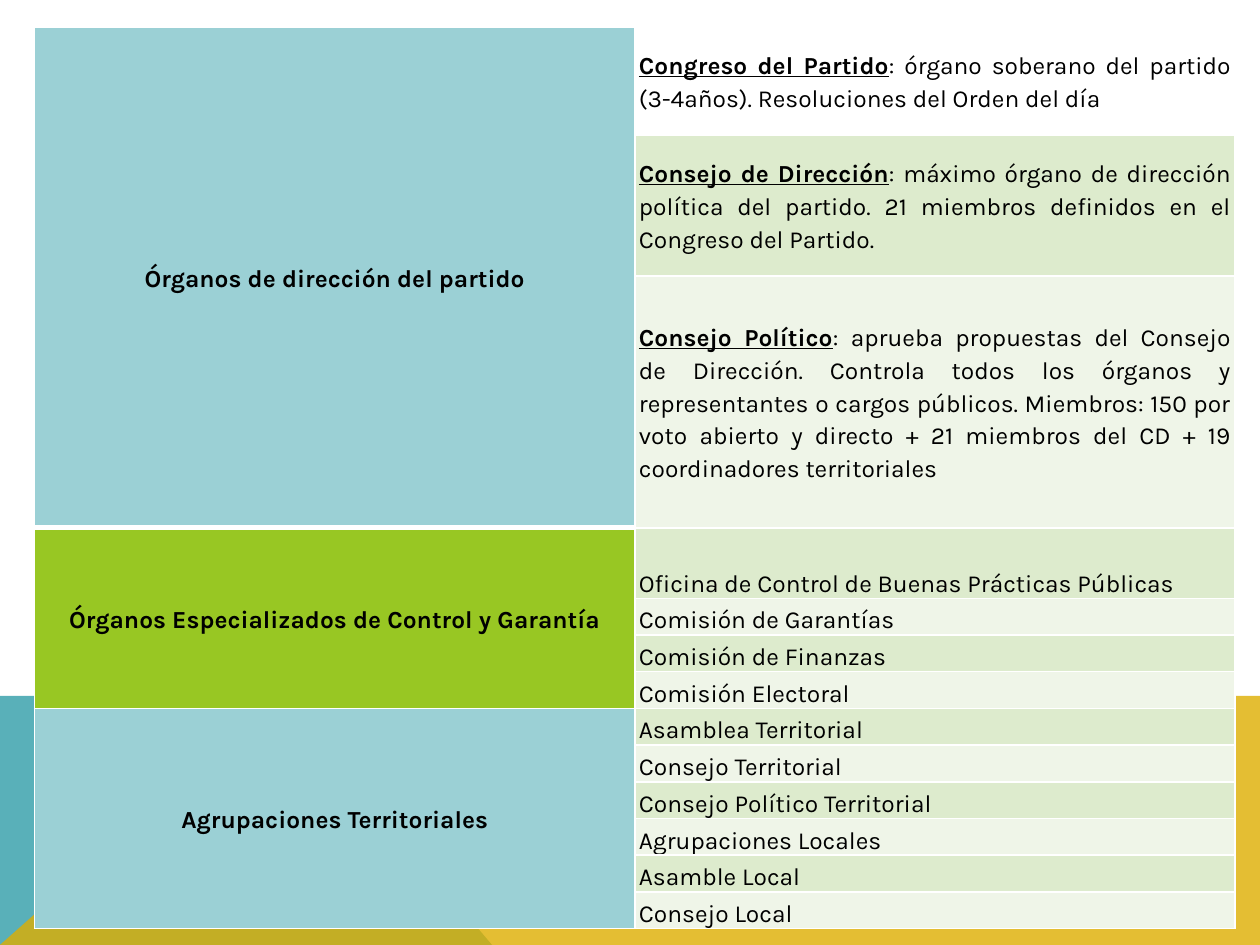
import pptx
import pptx.dml.color
import pptx.enum.text
import pptx.oxml
import pptx.oxml.ns
import pptx.util
from lxml import etree

Cm, Pt = pptx.util.Cm, pptx.util.Pt
ALIGN = pptx.enum.text.PP_ALIGN
ANCHOR = pptx.enum.text.MSO_ANCHOR

HUES = {
    "teal": "59B0B9",
    "gold": "DEAE00",
    "aqua": "9BD0D5",
    "lime": "98C723",
    "mint": "DDEBCD",
    "pale": "EFF5E8",
    "white": "FFFFFF",
    "black": "000000",
}
INSETS = {"margin_left": Cm(0.08), "margin_right": Cm(0.08),
          "margin_top": 0, "margin_bottom": 0}
FONT = {"name": "Karla", "size": Pt(14)}

# Each group: heading, fill, rows of (underlined lead, text, height in cm)
LOW = 0.74
GROUPS = [
    ("Órganos de dirección del partido", "aqua", [
        ("Congreso del Partido",
         ": órgano soberano del partido (3-4años). "
         "Resoluciones del Orden del día", 2.16),
        ("Consejo de Dirección",
         ": máximo órgano de dirección política del partido. "
         "21 miembros definidos en el Congreso del Partido.", 2.86),
        ("Consejo Político",
         ": aprueba propuestas del Consejo de Dirección. Controla todos los "
         "órganos y representantes o cargos públicos. Miembros: 150 por voto "
         "abierto y directo + 21 miembros del CD + 19 coordinadores "
         "territoriales", 5.08),
    ]),
    ("Órganos Especializados de Control y Garantía", "lime", [
        ("", "Oficina de Control de Buenas Prácticas Públicas", 1.42),
        ("", "Comisión de Garantías", LOW),
        ("", "Comisión de Finanzas", LOW),
        ("", "Comisión Electoral", LOW),
    ]),
    ("Agrupaciones Territoriales", "aqua", [
        ("", "Asamblea Territorial", LOW),
        ("", "Consejo Territorial", LOW),
        ("", "Consejo Político Territorial", LOW),
        ("", "Agrupaciones Locales", LOW),
        ("", "Asamble Local", LOW),
        ("", "Consejo Local", LOW),
    ]),
]


def style(item, values):
    for key, value in values.items():
        setattr(item, key, value)


def paint(fill, hue):
    fill.solid()
    fill.fore_color.rgb = pptx.dml.color.RGBColor.from_string(HUES[hue])


def add_band(slide, points, hue, alpha=None):
    """Draw a filled outline through points given in cm."""
    spots = [(Cm(x), Cm(y)) for x, y in points]
    pen = slide.shapes.build_freeform(*spots[0])
    pen.add_line_segments(spots[1:], close=True)
    band = pen.convert_to_shape()
    band.shadow.inherit = False
    band.line.fill.background()
    paint(band.fill, hue)
    if alpha:
        tone = band.fill._xPr.find(".//" + pptx.oxml.ns.qn("a:srgbClr"))
        node = etree.SubElement(tone, pptx.oxml.ns.qn("a:alpha"))
        node.set("val", str(alpha * 1000))


def edge(cell, base):
    """Give the cell white borders, the lower one base points wide."""
    props = cell._tc.get_or_add_tcPr()
    for side, width in zip("LRTB", (1, 1, 1, base)):
        props.append(pptx.oxml.parse_xml(
            f'<a:ln{side} {pptx.oxml.ns.nsdecls("a")} w="{Pt(width)}">'
            f'<a:solidFill><a:srgbClr val="{HUES["white"]}"/></a:solidFill>'
            f'</a:ln{side}>'))


def fill_cell(cell, runs, hue, align, anchor, base=1):
    """Write runs of (text, font values) into a coloured cell."""
    edge(cell, base)
    paint(cell.fill, hue)
    style(cell, {**INSETS, "vertical_anchor": anchor})
    para = cell.text_frame.paragraphs[0]
    style(para, {"alignment": align, "line_spacing": 1.15})
    for text, look in runs:
        run = para.add_run()
        run.text = text
        style(run.font, {**FONT, "bold": False, **look})
        paint(run.font.fill, "black")


def add_grid(slide):
    rows = [row for group in GROUPS for row in group[2]]
    wide, high = 12.1, sum(row[2] for row in rows)
    grid = slide.shapes.add_table(len(rows), 2, Cm(0.7), Cm(0.54),
                                  Cm(2 * wide), Cm(high)).table
    for col in grid.columns:
        col.width = Cm(wide)

    for num, (lead, text, tall) in enumerate(rows):
        grid.rows[num].height = Cm(tall)
        runs = [(text, {})]
        if lead:
            runs.insert(0, (lead, {"bold": True, "underline": True}))
        hue = "white" if num == 0 else ("pale", "mint")[num % 2]
        fill_cell(grid.cell(num, 1), runs, hue, ALIGN.JUSTIFY,
                  ANCHOR.MIDDLE if lead else ANCHOR.BOTTOM,
                  3 if num == 0 else 1)

    top = 0
    for head, hue, part in GROUPS:
        cell = grid.cell(top, 0)
        cell.merge(grid.cell(top + len(part) - 1, 0))
        fill_cell(cell, [(head, {"bold": True})], hue, ALIGN.CENTER,
                  ANCHOR.MIDDLE, 3 if top == 0 else 1)
        top += len(part)


def main():
    deck = pptx.Presentation()
    style(deck, {"slide_width": Cm(25.4), "slide_height": Cm(19.05)})
    slide = deck.slides.add_slide(deck.slide_layouts[6])
    paint(slide.background.fill, "white")
    add_band(slide, [(0, 19.05), (0, 14.03), (5.66, 14.03), (9.92, 19.05)],
             "teal")
    add_band(slide, [(0, 19.05), (5.66, 14.03), (25.4, 14.03),
                     (25.4, 19.05)], "gold", 80)
    add_grid(slide)
    deck.save("out.pptx")


if __name__ == "__main__":
    main()
